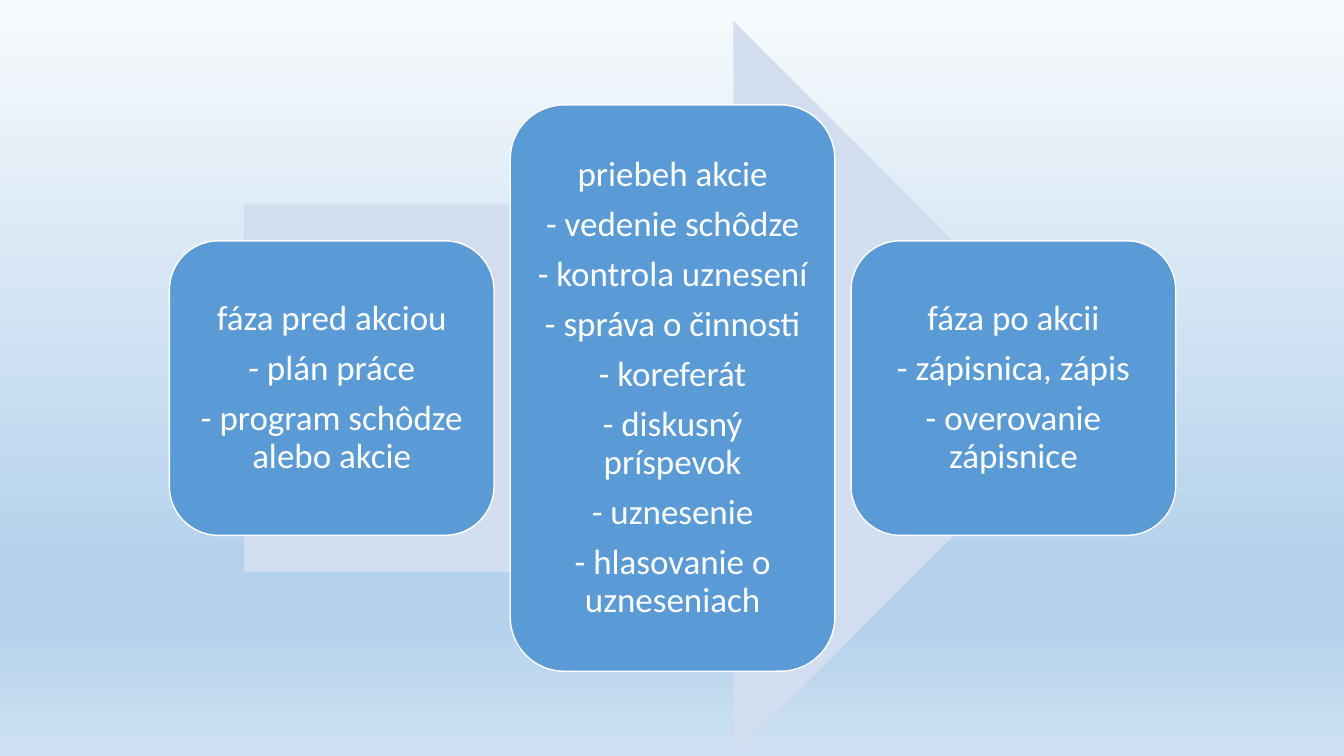
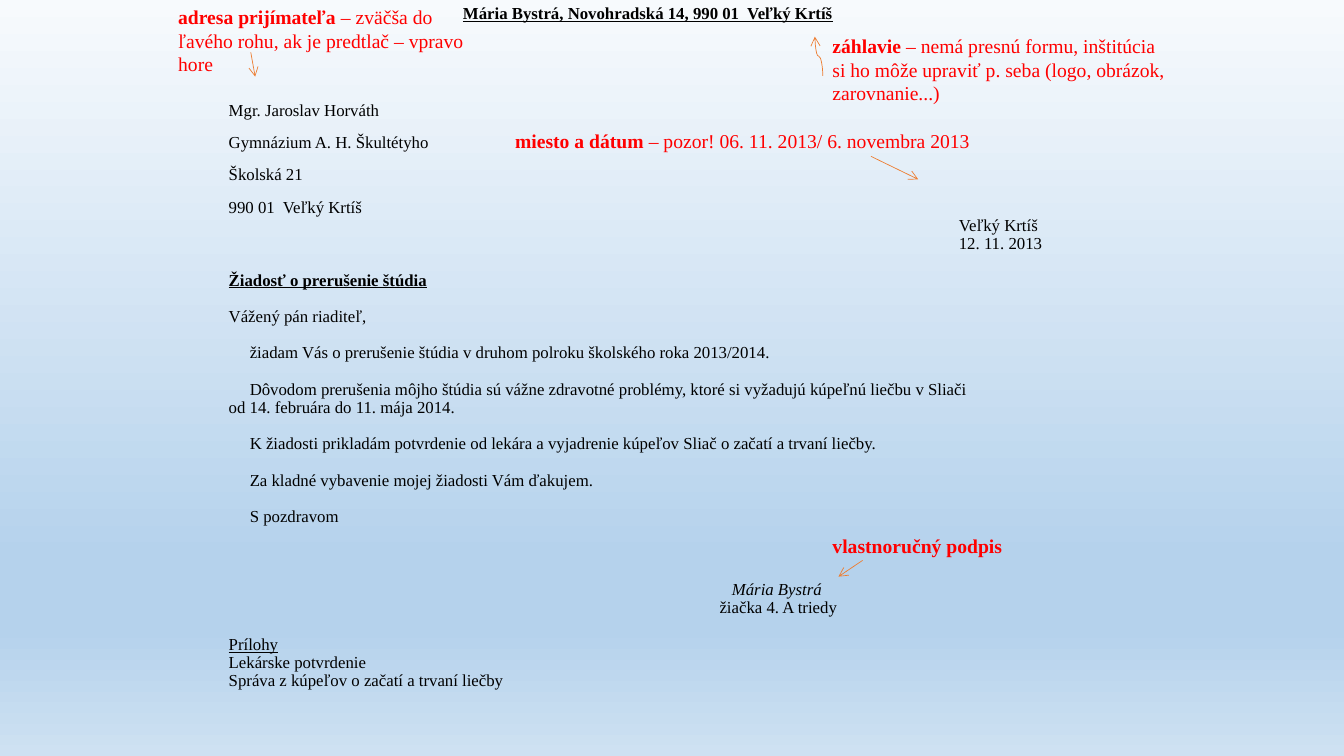
from dataclasses import dataclass

from lxml.etree import SubElement
from pptx import Presentation
from pptx.dml.color import RGBColor as Rgb
from pptx.enum.shapes import MSO_CONNECTOR as Link, MSO_SHAPE as Form
from pptx.enum.text import MSO_ANCHOR as Anchor, MSO_AUTO_SIZE as Fit, PP_ALIGN as Align
from pptx.oxml.ns import qn
from pptx.util import Cm, Pt


@dataclass(frozen=True)
class Theme:
    sans: str = "Calibri"
    serif: str = "Times New Roman"
    card: str = "5B9BD5"
    pale: str = "D2DEEF"
    white: str = "FFFFFF"
    black: str = "000000"
    red: str = "FF0000"
    orange: str = "ED7D31"
    sky: tuple = ((0, "F7FAFD"), (74, "B5D2EC"), (83, "B5D2EC"), (100, "CEE1F2"))
    big: float = 25
    mid: float = 14
    small: float = 12


@dataclass(frozen=True)
class Card:
    high: float
    lines: tuple[str, ...]


@dataclass(frozen=True)
class Row:
    """One paragraph of the letter; gap in points, indents in cm."""
    text: str
    gap: float = 0
    left: float = 0
    first: float = 0
    align: Align = Align.LEFT
    bold: bool = False
    under: bool = False
    slant: bool = False


@dataclass(frozen=True)
class Note:
    box: tuple[float, ...]
    head: str
    rest: str = ""


@dataclass(frozen=True)
class Arrow:
    ends: tuple[float, ...]
    kind: Link = Link.STRAIGHT
    turn: int = 0


LOOK = Theme()
LEAD = 13  # line pitch of the letter, also its blank-line gap
TAB = 0.53  # first-line indent of the letter

CARDS = (
    Card(7.42, ("fáza pred akciou", "- plán práce", "- program schôdze alebo akcie")),
    Card(14.27, ("priebeh akcie", "- vedenie schôdze", "- kontrola uznesení",
                 "- správa o činnosti", "- koreferát", "- diskusný príspevok",
                 "- uznesenie", "- hlasovanie o uzneseniach")),
    Card(7.42, ("fáza po akcii", "- zápisnica, zápis", "- overovanie zápisnice")),
)

LETTER = (
    Row("Mária Bystrá, Novohradská 14, 990 01  Veľký Krtíš",
        align=Align.CENTER, bold=True, under=True),
    Row("Mgr. Jaroslav Horváth", 56),
    Row("Gymnázium A. H. Škultétyho", 10),
    Row("Školská 21", 10),
    Row("990 01  Veľký Krtíš", 10),
    Row("Veľký Krtíš", left=18.4),
    Row("12. 11. 2013", left=18.4),
    Row("Žiadosť o prerušenie štúdia", LEAD, bold=True, under=True),
    Row("Vážený pán riaditeľ,", LEAD),
    Row("žiadam Vás o prerušenie štúdia v druhom polroku školského roka 2013/2014.",
        LEAD, first=TAB),
    Row("Dôvodom prerušenia môjho štúdia sú vážne zdravotné problémy, ktoré si "
        "vyžadujú kúpeľnú liečbu v Sliači\vod 14. februára do 11. mája 2014.",
        LEAD, first=TAB),
    Row("K žiadosti prikladám potvrdenie od lekára a vyjadrenie kúpeľov Sliač "
        "o začatí a trvaní liečby.", LEAD, first=TAB),
    Row("Za kladné vybavenie mojej žiadosti Vám ďakujem.", LEAD, first=TAB),
    Row("S pozdravom", LEAD, first=TAB),
    Row("Mária Bystrá", 3 * LEAD, left=12.68, slant=True),
    Row("žiačka 4. A triedy", left=12.37),
    Row("Prílohy", LEAD, under=True),
    Row("Lekárske potvrdenie"),
    Row("Správa z kúpeľov o začatí a trvaní liečby"),
)

NOTES = (
    Note((20.73, 0.74, 8.89, 2.06), "záhlavie",
         " – nemá presnú formu, inštitúcia si ho môže upraviť p. seba "
         "(logo, obrázok, zarovnanie...)"),
    Note((4.24, 0, 8, 2.06), "adresa prijímateľa ",
         "– zväčša do ľavého rohu, ak je predtlač – vpravo hore"),
    Note((12.73, 3.12, 11.99, 0.86), "miesto a dátum ",
         "– pozor! 06. 11. 2013/ 6. novembra 2013"),
    Note((20.73, 13.34, 7.39, 0.86), "vlastnoručný podpis"),
)

ARROWS = (
    Arrow((20.14, 1.52, 21.13, 1.32), Link.CURVE, 270),
    Arrow((6.32, 1.32, 6.43, 1.93)),
    Arrow((21.95, 3.94, 23.14, 4.52)),
    Arrow((21.74, 14.12, 21.13, 14.53)),
)


def style(run, face: str, size: float, tint: str, bold: bool = False) -> None:
    font = run.font
    font.name, font.size, font.bold = face, Pt(size), bold
    font.color.rgb = Rgb.from_string(tint)


def paint(master) -> None:
    """Give the master the gradient that every slide inherits."""
    fill = master.background.fill
    fill.gradient()
    fill.gradient_angle = 270
    stops = master.element.find(f".//{qn('a:gsLst')}")
    for old in list(stops):
        stops.remove(old)
    for pos, tint in LOOK.sky:
        stop = SubElement(stops, qn("a:gs"), pos=str(pos * 1000))
        SubElement(stop, qn("a:srgbClr"), val=tint)


def block(slide, form: Form, box: tuple[float, ...], tint: str):
    shape = slide.shapes.add_shape(form, *map(Cm, box))
    shape.shadow.inherit = False
    shape.fill.solid()
    shape.fill.fore_color.rgb = Rgb.from_string(tint)
    shape.line.fill.background()
    return shape


def draw_card(slide, card: Card, left: float, mid: float, wide: float) -> None:
    shape = block(slide, Form.ROUNDED_RECTANGLE,
                  (left, mid - card.high / 2, wide, card.high), LOOK.card)
    shape.line.color.rgb = Rgb.from_string(LOOK.white)
    shape.line.width = Pt(1)
    frame = shape.text_frame
    frame.margin_left = frame.margin_right = Cm(0.25)
    frame.margin_top = frame.margin_bottom = Cm(0.25)
    frame.vertical_anchor = Anchor.MIDDLE
    frame.word_wrap = True
    frame.text = "\n".join(card.lines)
    for para in frame.paragraphs:
        para.alignment = Align.CENTER
        para.line_spacing = 0.9
        para.space_after = Pt(0.35 * LOOK.big)
        for run in para.runs:
            style(run, LOOK.sans, LOOK.big, LOOK.white)


def write(frame, rows: tuple[Row, ...]) -> None:
    frame.auto_size = Fit.NONE
    frame.word_wrap = True
    frame.vertical_anchor = Anchor.TOP
    frame.text = "\n".join(row.text for row in rows)
    for para, row in zip(frame.paragraphs, rows):
        para.alignment = row.align
        para.line_spacing = Pt(LEAD)
        para.space_before, para.space_after = Pt(row.gap), Pt(0)
        props = para._p.get_or_add_pPr()
        props.set("marL", str(Cm(row.left)))
        props.set("indent", str(Cm(row.first)))
        SubElement(props, qn("a:buNone"))
        for run in para.runs:
            style(run, LOOK.serif, LOOK.small, LOOK.black, row.bold)
            run.font.underline, run.font.italic = row.under, row.slant


def draw_note(slide, note: Note) -> None:
    frame = slide.shapes.add_textbox(*map(Cm, note.box)).text_frame
    frame.word_wrap = True
    para = frame.paragraphs[0]
    for text, bold in ((note.head, True), (note.rest, False)):
        if text:
            run = para.add_run()
            run.text = text
            style(run, LOOK.serif, LOOK.mid, LOOK.red, bold)


def draw_arrow(slide, arrow: Arrow) -> None:
    link = slide.shapes.add_connector(arrow.kind, *map(Cm, arrow.ends))
    link.line.color.rgb = Rgb.from_string(LOOK.orange)
    link.line.width = Pt(0.5)
    props = link._element.spPr
    SubElement(props.find(qn("a:ln")), qn("a:tailEnd"), type="arrow")
    SubElement(props, qn("a:effectLst"))
    if arrow.turn:
        props.find(qn("a:xfrm")).set("rot", str(arrow.turn * 60000))


def show_phases(deck) -> None:
    slide = deck.slides.add_slide(deck.slide_layouts[6])
    block(slide, Form.RIGHT_ARROW, (6.15, 0.53, 21.59, 18.52), LOOK.pale)
    left, mid, wide, gap = 4.27, 9.78, 8.18, 0.41
    for num, card in enumerate(CARDS):
        draw_card(slide, card, left + num * (wide + gap), mid, wide)


def show_letter(deck) -> None:
    slide = deck.slides.add_slide(deck.slide_layouts[1])
    title = slide.shapes.title.element
    title.getparent().remove(title)
    # Letter text
    body = slide.placeholders[1]
    body.left, body.top, body.width, body.height = map(Cm, (5.51, 0, 21.64, 19.05))
    write(body.text_frame, LETTER)
    # Red remarks and their arrows
    for note in NOTES:
        draw_note(slide, note)
    for arrow in ARROWS:
        draw_arrow(slide, arrow)


def main() -> None:
    deck = Presentation()
    deck.slide_width, deck.slide_height = Cm(33.87), Cm(19.05)
    paint(deck.slide_master)
    show_phases(deck)
    show_letter(deck)
    deck.save("out.pptx")


if __name__ == "__main__":
    main()
